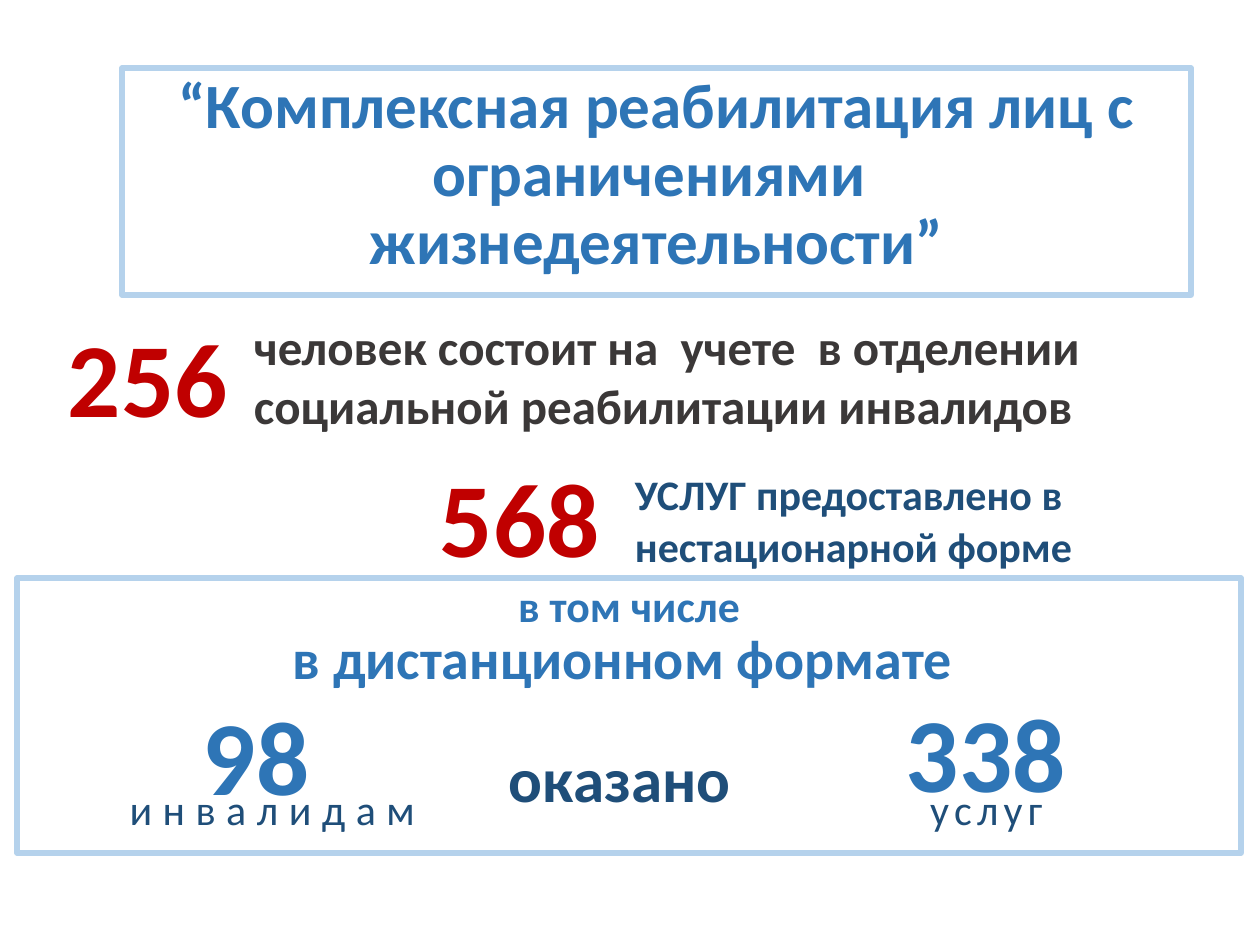
import dataclasses
import typing

import pptx
import pptx.dml.color
import pptx.enum.text
import pptx.oxml.xmlchemy
import pptx.util
from lxml import etree

SCALE = 914400 / 126  # EMU in one px
FONT = "Calibri"
COLORS = {
    "blue": "2E75B6",
    "navy": "1F4E79",
    "red": "C00000",
    "gray": "3B3838",
    "frame": "B5D2EC",
}
ALIGN = pptx.enum.text.PP_ALIGN
ANCHOR = pptx.enum.text.MSO_ANCHOR
FIT = pptx.enum.text.MSO_AUTO_SIZE


@dataclasses.dataclass
class Line:
    text: str
    size: int
    color: str
    bold: bool = True
    track: int = 0  # letter spacing, points
    align: typing.Any = ALIGN.LEFT
    lead: typing.Any = None


@dataclasses.dataclass
class Box:
    left: int
    top: int
    width: int
    height: int
    line: Line
    wrap: bool = True
    fit: typing.Any = FIT.SHAPE_TO_FIT_TEXT
    anchor: typing.Any = ANCHOR.TOP
    inset: int = 13


def px(n: int) -> int:
    return round(n * SCALE)


def rgb(name: str) -> pptx.dml.color.RGBColor:
    return pptx.dml.color.RGBColor.from_string(COLORS[name])


def style(para, line: Line) -> None:
    para.alignment = line.align
    para.space_before = pptx.util.Pt(0)
    if line.lead:
        para.line_spacing = line.lead
    for run in para.runs:
        font = run.font
        font.name = FONT
        font.size = pptx.util.Pt(line.size)
        font.bold = line.bold
        font.color.rgb = rgb(line.color)
        if line.track:
            font._element.set("spc", str(line.track * 100))


def fill_frame(holder, place: tuple[int, int, int, int], lines: list[Line]) -> None:
    """Place a framed placeholder and write plain, unbulleted lines in it."""
    holder.left, holder.top, holder.width, holder.height = map(px, place)
    holder.line.color.rgb = rgb("frame")
    holder.line.width = pptx.util.Pt(3)
    frame = holder.text_frame
    frame.word_wrap = True
    frame.auto_size = FIT.NONE
    frame.vertical_anchor = ANCHOR.TOP
    frame.text = "\n".join(line.text for line in lines)
    for para, line in zip(frame.paragraphs, lines):
        props = para._p.get_or_add_pPr()
        props.set("marL", "0")
        props.set("indent", "0")
        etree.SubElement(props, pptx.oxml.ns.qn("a:buNone"))
        style(para, line)


def add_box(slide, box: Box) -> None:
    place = map(px, (box.left, box.top, box.width, box.height))
    frame = slide.shapes.add_textbox(*place).text_frame
    frame.word_wrap = box.wrap
    frame.auto_size = box.fit
    frame.vertical_anchor = box.anchor
    frame.margin_left = px(box.inset)
    frame.text = box.line.text
    style(frame.paragraphs[0], box.line)


def number(left: int, top: int, width: int, text: str, color: str) -> Box:
    return Box(left, top, width, 140, Line(text, 60, color), wrap=False)


def label(left: int, width: int, text: str, track: int, inset: int = 13) -> Box:
    line = Line(text, 24, "navy", False, track, ALIGN.CENTER, 0.9)
    return Box(left, 755, width, 113, line, fit=FIT.NONE,
               anchor=ANCHOR.MIDDLE, inset=inset)


def head(text: str, size: int) -> Line:
    return Line(text, size, "blue", align=ALIGN.CENTER, lead=0.9)


def main() -> None:
    deck = pptx.Presentation()
    deck.slide_width, deck.slide_height = px(1260), px(945)
    slide = deck.slides.add_slide(deck.slide_layouts[1])
    title, body = slide.placeholders

    # Framed title and remote services panel
    fill_frame(title, (122, 68, 1069, 227), [
        head("“Комплексная реабилитация лиц с ограничениями ", 36),
        head("жизнедеятельности”", 36),
    ])
    fill_frame(body, (17, 578, 1224, 275), [
        head("в том числе", 25),
        head("в дистанционном формате ", 32),
    ])

    # Statements, captions and figures
    people = Line("человек состоит на  учете  в отделении "
                  "социальной реабилитации инвалидов", 28, "gray")
    served = Line("УСЛУГ предоставлено в нестационарной форме", 24, "navy",
                  lead=pptx.util.Pt(30))
    boxes = [
        Box(241, 310, 1116, 131, people),
        Box(622, 460, 527, 118, served),
        label(30, 424, "инвалидам", 6, inset=73),
        label(839, 294, "услуг", 3),
        Box(496, 733, 249, 89, Line("оказано", 36, "navy"), wrap=False),
        number(55, 306, 186, "256", "red"),
        number(427, 446, 186, "568", "red"),
        number(893, 681, 186, "338", "blue"),
        number(190, 684, 132, "98", "blue"),
    ]
    for box in boxes:
        add_box(slide, box)

    deck.save("out.pptx")


if __name__ == "__main__":
    main()
